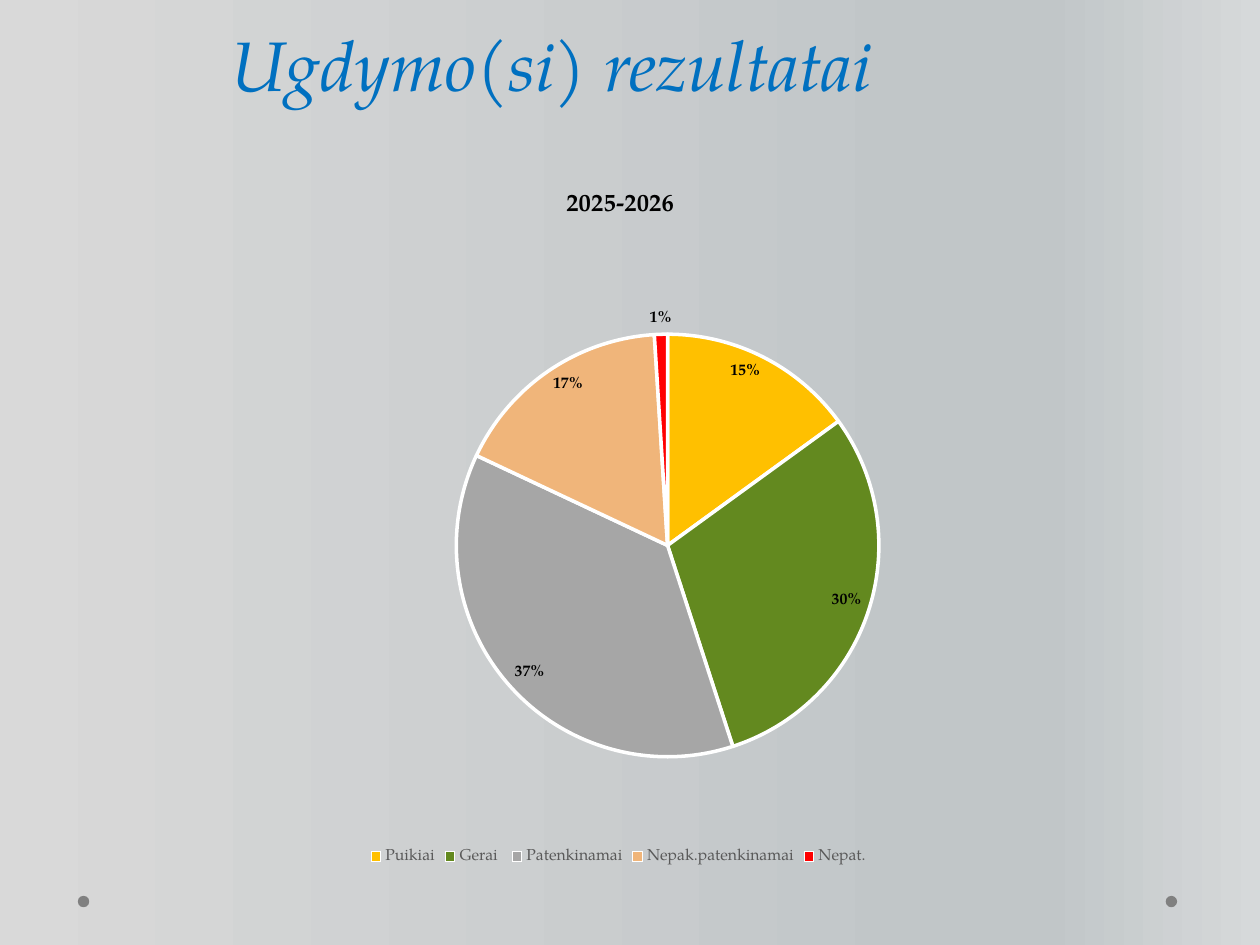
"""Build the slide with the pie chart of learning results."""
import copy
from dataclasses import dataclass

import pptx
import pptx.chart.data
import pptx.dml.color
import pptx.enum.chart
import pptx.enum.shapes
import pptx.enum.text
import pptx.oxml
import pptx.oxml.ns
import pptx.util
from pptx.util import Cm, Pt


@dataclass(frozen=True)
class Theme:
    """Colours, font and type sizes."""
    face: str = "TeX Gyre Pagella"
    title: str = "0070C0"
    ink: str = "000000"
    grey: str = "595959"
    dot: str = "808080"
    edge: str = "FFFFFF"
    head: int = 40
    lead: int = 58
    name: int = 14
    base: int = 10
    small: int = 9


@dataclass(frozen=True)
class Slice:
    """One slice of the pie."""
    label: str
    value: int
    color: str


@dataclass(frozen=True)
class Dot:
    """One round mark at the foot of the slide."""
    left: float
    top: float = 18.06
    size: float = 0.23


@dataclass(frozen=True)
class Stop:
    """One stop of the background blend."""
    place: float
    color: str


THEME = Theme()
SLICES = [
    Slice("Puikiai", 15, "FFC000"),
    Slice("Gerai ", 30, "63891F"),
    Slice("Patenkinamai", 37, "A6A6A6"),
    Slice("Nepak.patenkinamai", 17, "F0B57A"),
    Slice("Nepat. ", 1, "FF0000"),
]
DOTS = [Dot(23.5), Dot(1.57)]
STOPS = [Stop(0, "D9D9D9"), Stop(0.74, "C1C6C8"), Stop(0.83, "C1C6C8"), Stop(1, "D6D9DA")]


def rgb(color: str) -> pptx.dml.color.RGBColor:
    """Turn a hex string into a colour."""
    return pptx.dml.color.RGBColor.from_string(color)


def style(font, size: int, color: str, bold: bool = False, slant: bool = False) -> None:
    """Set the look of a font."""
    font.name, font.size = THEME.face, Pt(size)
    font.bold, font.italic = bold, slant
    font.color.rgb = rgb(color)


def paint(slide, stops: list[Stop]) -> None:
    """Fill the background with a level blend."""
    fill = slide.background.fill
    fill.gradient()
    fill.gradient_angle = 0
    group = slide.element.find(".//" + pptx.oxml.ns.qn("a:gsLst"))
    for _ in range(len(stops) - len(group)):
        group.append(copy.deepcopy(group[0]))
    for mark, stop in zip(fill.gradient_stops, stops):
        mark.position = stop.place
        mark.color.rgb = rgb(stop.color)


def draw_dot(slide, dot: Dot) -> None:
    """Draw one round mark."""
    shape = slide.shapes.add_shape(
        pptx.enum.shapes.MSO_SHAPE.OVAL, Cm(dot.left), Cm(dot.top), Cm(dot.size), Cm(dot.size))
    shape.shadow.inherit = False
    shape.fill.solid()
    shape.fill.fore_color.rgb = rgb(THEME.dot)
    shape.line.fill.background()


def set_title(slide, text: str) -> None:
    """Place and format the slide title."""
    title = slide.shapes.title
    title.left, title.top, title.width, title.height = Cm(2.31), Cm(1.5), Cm(17.63), Cm(2.79)
    frame = title.text_frame
    frame.word_wrap = True
    frame.auto_size = pptx.enum.text.MSO_AUTO_SIZE.NONE
    frame.vertical_anchor = pptx.enum.text.MSO_ANCHOR.BOTTOM
    frame.margin_bottom = Cm(2.17)
    para = frame.paragraphs[0]
    para.alignment = pptx.enum.text.PP_ALIGN.CENTER
    para.line_spacing = Pt(THEME.lead)
    run = para.add_run()
    run.text = text
    style(run.font, THEME.head, THEME.title, slant=True)


def fix_plot(chart, left: float, top: float, width: float, height: float) -> None:
    """Pin the inner plot area and clear the chart fill."""
    space = pptx.oxml.ns.nsdecls("c", "a")
    sides = "".join(f'<c:{key} val="{val}"/>' for key, val in
                    zip("xywh", (left, top, width, height)))
    layout = pptx.oxml.parse_xml(
        f'<c:layout {space}><c:manualLayout><c:layoutTarget val="inner"/>'
        f'<c:xMode val="edge"/><c:yMode val="edge"/>{sides}</c:manualLayout></c:layout>')
    root = chart.element
    area = root.find(".//" + pptx.oxml.ns.qn("c:plotArea"))
    for old in area.findall(pptx.oxml.ns.qn("c:layout")):
        area.remove(old)
    area.insert(0, layout)
    clear = f"<c:spPr {space}><a:noFill/><a:ln><a:noFill/></a:ln></c:spPr>"
    root.find(pptx.oxml.ns.qn("c:chart")).addnext(pptx.oxml.parse_xml(clear))


def set_labels(plot, last: int) -> None:
    """Show shares inside the pie, with the last one outside."""
    spot = pptx.enum.chart.XL_LABEL_POSITION
    labels = plot.series[0].data_labels
    labels.show_percentage, labels.show_value = True, False
    labels.position = spot.INSIDE_END
    style(labels.font, THEME.small, THEME.ink, bold=True)
    label = plot.series[0].points[last].data_label
    style(label.font, THEME.small, THEME.ink, bold=True)
    label.position = spot.OUTSIDE_END
    node = plot.series[0].data_labels._element.find(pptx.oxml.ns.qn("c:dLbl"))
    for tag, state in (("c:showVal", "0"), ("c:showPercent", "1")):
        node.find(pptx.oxml.ns.qn(tag)).set("val", state)


def draw_pie(slide, name: str, slices: list[Slice]) -> None:
    """Draw the pie chart with its title and legend."""
    data = pptx.chart.data.CategoryChartData()
    data.categories = [item.label for item in slices]
    data.add_series("Series 1", [item.value for item in slices])
    chart = slide.shapes.add_chart(
        pptx.enum.chart.XL_CHART_TYPE.PIE, Cm(1.9), Cm(3.33), Cm(21.21), Cm(14.2), data).chart
    style(chart.font, THEME.base, THEME.ink)
    chart.has_title = True
    run = chart.chart_title.text_frame.paragraphs[0].add_run()
    run.text = name
    style(run.font, THEME.name, THEME.ink, bold=True)
    chart.chart_title.include_in_layout = False
    chart.has_legend = True
    chart.legend.position = pptx.enum.chart.XL_LEGEND_POSITION.BOTTOM
    chart.legend.include_in_layout = False
    style(chart.legend.font, THEME.small, THEME.grey)
    plot = chart.plots[0]
    plot.vary_by_categories = True
    for index, item in enumerate(slices):
        form = plot.series[0].points[index].format
        form.fill.solid()
        form.fill.fore_color.rgb = rgb(item.color)
        form.line.color.rgb = rgb(THEME.edge)
        form.line.width = Pt(2)
    set_labels(plot, len(slices) - 1)
    fix_plot(chart, 0.09, 0.24, 0.91, 0.6)


def main() -> None:
    """Build and save the deck."""
    deck = pptx.Presentation()
    deck.slide_width, deck.slide_height = Cm(25.4), Cm(19.05)
    slide = deck.slides.add_slide(deck.slide_layouts[5])
    paint(slide, STOPS)
    for dot in DOTS:
        draw_dot(slide, dot)
    set_title(slide, "Ugdymo(si) rezultatai")
    draw_pie(slide, "2025-2026", SLICES)
    deck.save("out.pptx")


if __name__ == "__main__":
    main()
